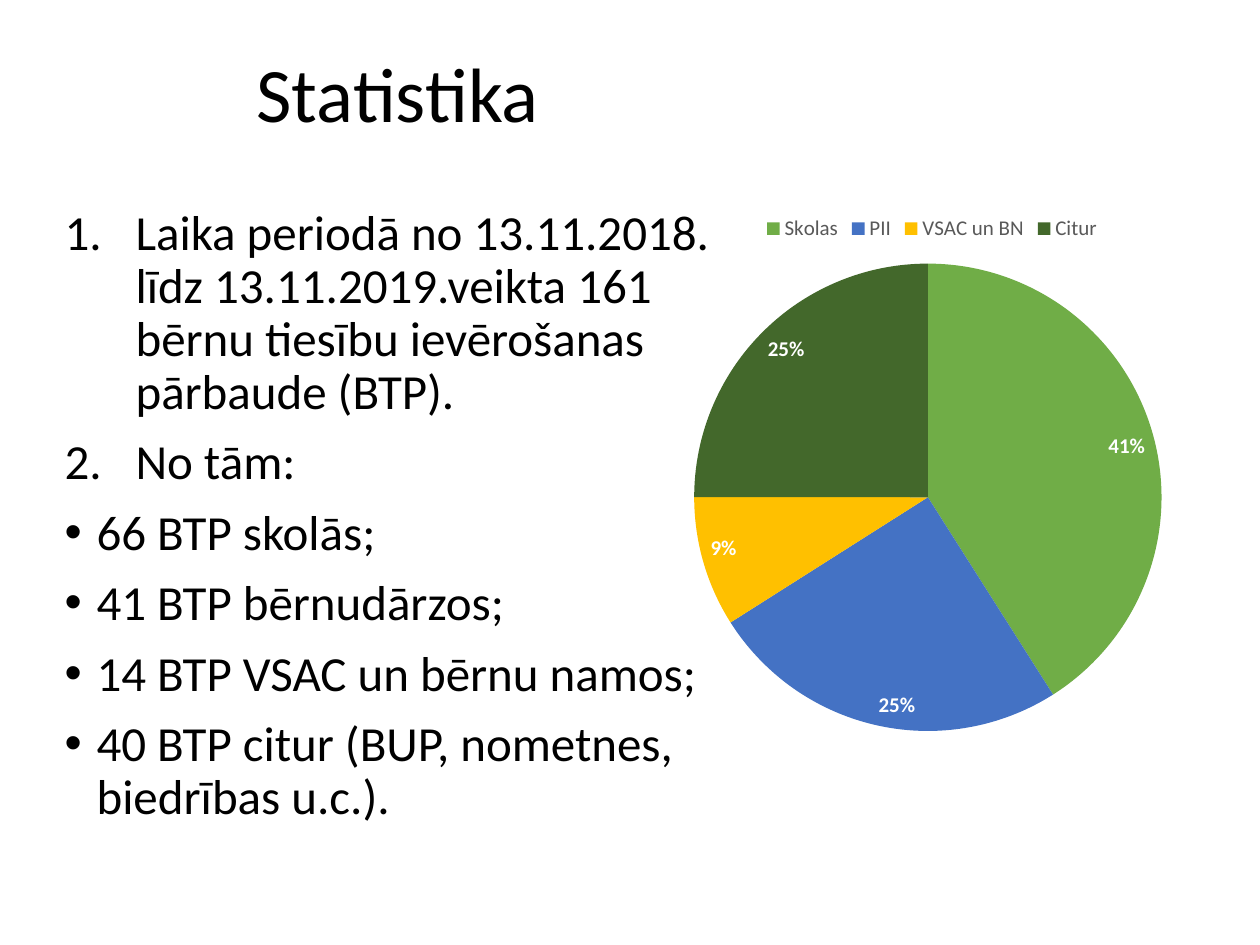
from lxml.etree import SubElement as Sub
from pptx import Presentation
from pptx.chart.data import CategoryChartData as Data
from pptx.dml.color import RGBColor as Rgb
from pptx.enum.chart import XL_CHART_TYPE as Kind, XL_LABEL_POSITION as Spot, XL_LEGEND_POSITION as Side
from pptx.enum.text import MSO_ANCHOR as Anchor, MSO_AUTO_SIZE as Fit, PP_ALIGN as Align
from pptx.oxml import parse_xml
from pptx.oxml.ns import nsdecls, qn
from pptx.util import Pt

PX = 914400 / 126
FACE = "Calibri"
HUES = {"ink": "000000", "grey": "595959", "white": "FFFFFF"}
PARTS = {
    "Skolas": (41, "70AD47"),
    "PII": (25, "4472C4"),
    "VSAC un BN": (9, "FFC000"),
    "Citur": (25, "43682B"),
}
STEPS = [
    "Laika periodā no 13.11.2018. līdz 13.11.2019.veikta 161 bērnu tiesību ievērošanas pārbaude (BTP).",
    "No tām:",
]
COUNTS = [
    "66 BTP skolās;",
    "41 BTP bērnudārzos;",
    "14 BTP VSAC un bērnu namos;",
    "40 BTP citur (BUP, nometnes, biedrības u.c.).",
]


def emu(n):
    """Turn px into EMU."""
    return round(n * PX)


def style(font, size, hue, bold=False):
    """Set face, size, colour and weight of a font."""
    font.name, font.size, font.bold = FACE, Pt(size), bold
    font.color.rgb = Rgb.from_string(HUES[hue])


def place(shape, box):
    """Move a placeholder to a box and prepare its text frame."""
    shape.left, shape.top, shape.width, shape.height = map(emu, box)
    frame = shape.text_frame
    frame.word_wrap, frame.auto_size = True, Fit.NONE
    frame.vertical_anchor = Anchor.TOP
    return frame


def mark(para, dent, tag, **attrs):
    """Give a paragraph a hanging indent and a bullet or number."""
    props = para._p.get_or_add_pPr()
    props.set("marL", str(emu(dent)))
    props.set("indent", str(-emu(dent)))
    Sub(props, qn("a:buFont"), typeface="Arial" if tag == "buChar" else "+mj-lt")
    Sub(props, qn("a:" + tag), **attrs)


def add_title(slide, box):
    """Write the slide title."""
    frame = place(slide.shapes.title, box)
    frame.text = "Statistika"
    para = frame.paragraphs[0]
    para.alignment, para.line_spacing = Align.LEFT, 0.9
    style(para.runs[0].font, 44, "ink")


def add_list(slide, box):
    """Write the numbered steps and the bulleted counts."""
    frame = place(slide.placeholders[1], box)
    frame.text = "\n".join(STEPS + COUNTS)
    for i, para in enumerate(frame.paragraphs):
        if i < len(STEPS):
            mark(para, 71, "buAutoNum", type="arabicPeriod")
        else:
            mark(para, 32, "buChar", char="•")
        para.line_spacing, para.space_before = 0.9, Pt(10 if i else 0)
        style(para.runs[0].font, 28, "ink")


def set_plot(chart, box, pie):
    """Fix the pie's box inside the chart's box."""
    left, top, wide, high = box
    spots = {
        "x": (pie[0] - left) / wide,
        "y": (pie[1] - top) / high,
        "w": pie[2] / wide,
        "h": pie[3] / high,
    }
    modes = "".join(f'<c:{k}Mode val="edge"/>' for k in "xy")
    sizes = "".join(f'<c:{k} val="{v:.2f}"/>' for k, v in spots.items())
    area = chart._chartSpace.chart.plotArea
    for old in area.findall(qn("c:layout")):
        area.remove(old)
    area.insert(0, parse_xml(
        f'<c:layout {nsdecls("c")}><c:manualLayout><c:layoutTarget val="inner"/>'
        f"{modes}{sizes}</c:manualLayout></c:layout>"))


def add_pie(slide, box):
    """Draw the pie of checks by place."""
    data = Data(number_format="0")
    data.categories = list(PARTS)
    data.add_series("Series 1", [val for val, hue in PARTS.values()])
    chart = slide.shapes.add_chart(Kind.PIE, *map(emu, box), data).chart
    chart.has_title = False
    style(chart.font, 10, "ink")
    chart.has_legend = True
    key = chart.legend
    key.position, key.include_in_layout = Side.TOP, False
    style(key.font, 12, "grey")
    plot = chart.plots[0]
    plot.vary_by_categories = True
    for i, (val, hue) in enumerate(PARTS.values()):
        fill = plot.series[0].points[i].format.fill
        fill.solid()
        fill.fore_color.rgb = Rgb.from_string(hue)
    plot.has_data_labels = True
    tags = plot.data_labels
    tags.show_percentage, tags.show_value = True, False
    tags.number_format, tags.number_format_is_linked = "0%", False
    tags.position = Spot.INSIDE_END
    style(tags.font, 12, "white", True)
    left, top = box[:2]
    set_plot(chart, box, (left + 175, top + 61, 468, 468))


def main():
    """Build the slide and save it."""
    deck = Presentation()
    deck.slide_width, deck.slide_height = emu(1260), emu(945)
    slide = deck.slides.add_slide(deck.slide_layouts[1])
    add_title(slide, (244, 50, 930, 183))
    add_list(slide, (52, 202, 726, 600))
    add_pie(slide, (522, 202, 820, 547))
    deck.save("out.pptx")


if __name__ == "__main__":
    main()
